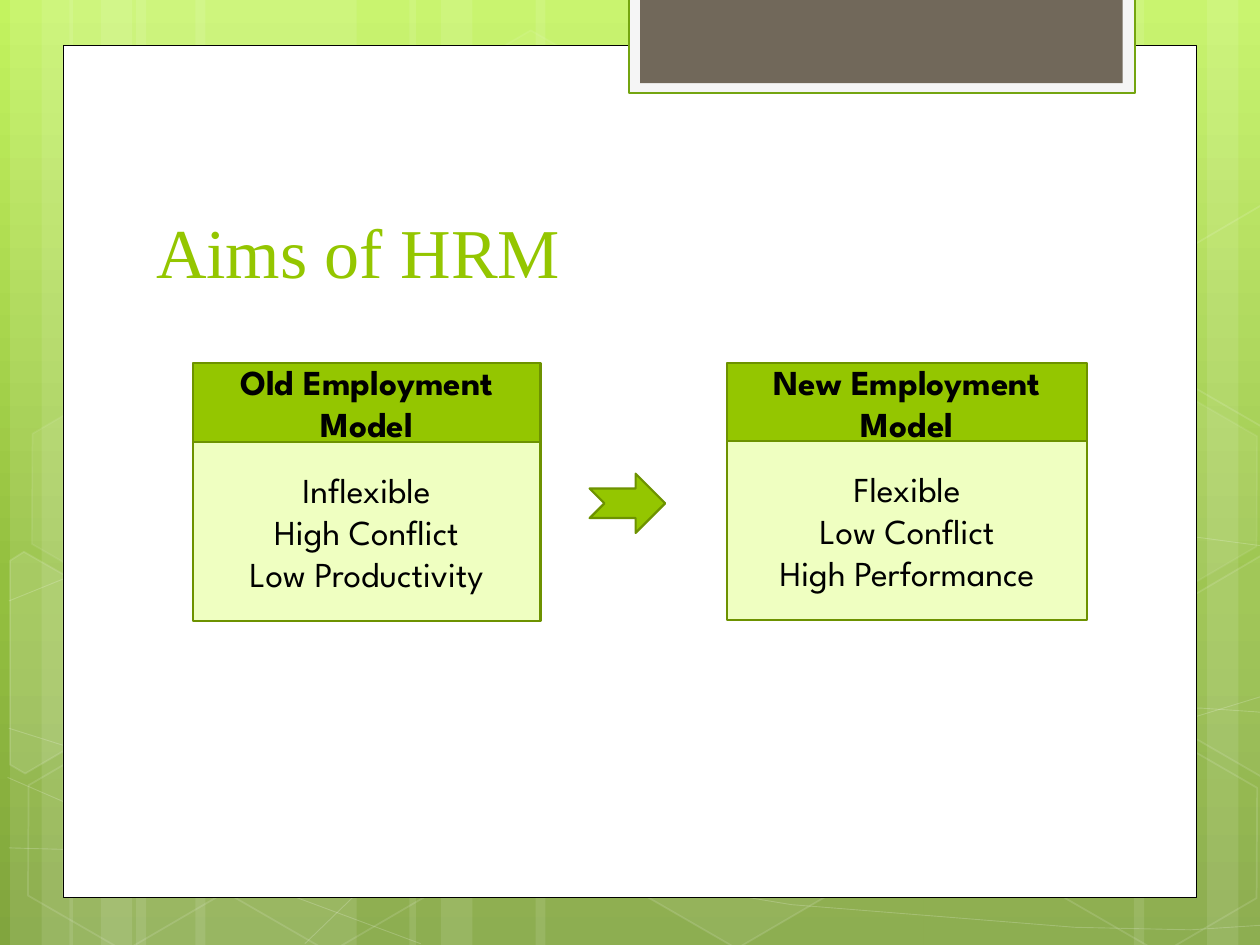
"""Build the "Aims of HRM" slide comparing the old and new employment models."""
import copy

from lxml import etree
from pptx import Presentation
from pptx import util as u
from pptx.dml.color import RGBColor
from pptx.enum import shapes, text
from pptx.oxml.ns import qn


class Theme:
    white, black, green, dark_green = "FFFFFF", "000000", "94C600", "6D9200"
    pale, tab, tab_edge, tab_core = "EFFFC1", "F5F5F5", "74A510", "71685A"
    sky = [(0, "C3F35F"), (0.62, "93BF3F"), (1, "81A53E")]
    title_font, body_font = "Times New Roman", "League Spartan"
    title_size, body_size = u.Pt(40), u.Pt(20)


def paint(sp, fill=None, line=None, width=1.25, fill_alpha=100, line_alpha=100):
    sp.shadow.inherit = False
    if line:
        sp.line.width = u.Pt(width)
    for part, color, alpha in ((sp.fill, fill, fill_alpha), (sp.line.fill, line, line_alpha)):
        if color is None:
            part.background()
            continue
        part.solid()
        part.fore_color.rgb = RGBColor.from_string(color)
        if alpha < 100:
            holder = sp.element.spPr if part is sp.fill else sp.line._ln
            clr = holder.find(qn("a:solidFill")).find(qn("a:srgbClr"))
            etree.SubElement(clr, qn("a:alpha")).set("val", str(alpha * 1000))


def outline(parent, points, close):
    emu = [(u.Inches(x), u.Inches(y)) for x, y in points]
    builder = parent.build_freeform(*emu[0])
    builder.add_line_segments(emu[1:], close=close)
    return builder.convert_to_shape()


prs = Presentation()
prs.slide_width, prs.slide_height = u.Inches(10), u.Inches(7.5)
s = prs.slides.add_slide(prs.slide_layouts[6])
rect = shapes.MSO_SHAPE.RECTANGLE

bg = s.background.fill
bg.gradient()
bg.gradient_angle = 270
stop_list = next(s.element.iter(qn("a:gsLst")))
stop_list.append(copy.deepcopy(stop_list[-1]))
for stop, (position, color) in zip(bg.gradient_stops, Theme.sky):
    stop.position = position
    stop.color.rgb = RGBColor.from_string(color)

decor = s.shapes.add_group_shape().shapes
bands = [(1.08, 1.75), (0.08, 0.5), (0.33, 0.83), (1.55, 1.75), (0.55, 0.5), (0.8, 0.83),
         (7.33, 1.75), (9.58, 0.5), (9, 0.83), (4.25, 3.08), (3.25, 0.5), (3.5, 0.83)]
for left, width in bands:
    sp = decor.add_shape(rect, u.Inches(left), 0, u.Inches(width), prs.slide_height)
    paint(sp, Theme.white, fill_alpha=10)

waves = [
    [(0.07, 6.73), (1.9, 6.78), (4.58, 6.65), (7.92, 6.17), (10.07, 5.51)],
    [(0.07, 4.77), (1.21, 4.31), (3.47, 3.87), (6.54, 3.87), (10.07, 4.34)],
    [(0.06, 6.17), (1.7, 6.88), (3.34, 7.49)],
    [(0.07, 5.78), (1.28, 6.16), (3.57, 6.73), (6.28, 7.18), (8.53, 7.36), (9.45, 7.38), (10.07, 7.34)],
    [(2.42, 7.49), (3.02, 6.91), (3.88, 6.39), (4.7, 6.09), (6.08, 5.78), (6.8, 5.69),
     (7.94, 5.62), (8.86, 5.62), (9.53, 5.62), (9.97, 5.65), (10.06, 5.66)],
]
for wave in waves:
    paint(outline(decor, wave, False), line=Theme.white, width=0.5, line_alpha=20)

hexagons = [(3.34, 0.36, 4, 8), (4.97, 5.89, 6, 12), (0.11, 5.91, 0, 12), (0.14, 3.12, 7, 8),
            (1.74, 5.92, 0, 12), (7.53, 4.53, 10, 12), (8.34, 5.93, 0, 12), (8.34, 3.14, 7, 8)]
for left, top, fill_alpha, line_alpha in hexagons:
    sp = decor.add_shape(shapes.MSO_SHAPE.HEXAGON, u.Inches(left), u.Inches(top), u.Inches(1.75), u.Inches(1.52))
    sp.adjustments[0], sp.adjustments[1] = 0.285, 1.155
    sp.rotation = 30
    paint(sp, Theme.white if fill_alpha else None, Theme.white, 1, fill_alpha, line_alpha)

cut_hexagons = [
    (10, [(0.08, 4.45), (0.19, 4.38), (0.96, 4.82), (0.95, 5.7), (0.2, 6.14), (0.08, 6.07)]),
    (4, [(9.26, 4.85), (10.01, 4.41), (10.09, 4.46), (10.09, 6.13), (10.02, 6.17), (9.26, 5.73)]),
    (0, [(9.26, 2.07), (10.01, 1.63), (10.1, 1.68), (10.09, 3.35), (10.02, 3.39), (9.26, 2.95)]),
]
for fill_alpha, points in cut_hexagons:
    paint(outline(decor, points, True), Theme.white if fill_alpha else None, Theme.white, 1, fill_alpha, 12)

panels = [(0.5, 0.36, 9, 6.76, Theme.white, Theme.black, 0.5),
          (4.99, -0.02, 4.02, 0.76, Theme.tab, Theme.tab_edge, 1.25),
          (5.08, -0.02, 3.83, 0.68, Theme.tab_core, None, 0)]
for *box, fill, line, width in panels:
    paint(s.shapes.add_shape(rect, *map(u.Inches, box)), fill, line, width)

title = s.shapes.add_textbox(u.Inches(1.14), u.Inches(1.12), u.Inches(7.68), u.Inches(1.25))
tf = title.text_frame
tf.word_wrap = True
tf.vertical_anchor = text.MSO_ANCHOR.BOTTOM
p = tf.paragraphs[0]
p.text = "Aims of HRM"
p.font.name, p.font.size = Theme.title_font, Theme.title_size
p.font.color.rgb = RGBColor.from_string(Theme.green)

models = [
    (1.53, 2.76, 3.51, "Old Employment Model", ["Inflexible", "High Conflict", "Low Productivity"]),
    (5.77, 2.86, 3.5, "New Employment Model", ["Flexible", "Low Conflict", "High Performance"]),
]
for left, width, body_top, heading, traits in models:
    card = s.shapes.add_group_shape().shapes
    rows = [(2.88, 0.63, Theme.green, True, [heading]), (body_top, 1.42, Theme.pale, False, traits)]
    for top, height, fill, bold, lines in rows:
        sp = card.add_shape(rect, *map(u.Inches, (left, top, width, height)))
        paint(sp, fill, Theme.dark_green)
        tf = sp.text_frame
        tf.word_wrap = True
        tf.vertical_anchor = text.MSO_ANCHOR.MIDDLE
        tf.text = "\n".join(lines)
        for p in tf.paragraphs:
            p.alignment = text.PP_ALIGN.CENTER
            p.font.name, p.font.size, p.font.bold = Theme.body_font, Theme.body_size, bold
            p.font.color.rgb = RGBColor.from_string(Theme.black)

arrow = s.shapes.add_shape(shapes.MSO_SHAPE.NOTCHED_RIGHT_ARROW, *map(u.Inches, (4.68, 3.76, 0.6, 0.47)))
paint(arrow, Theme.green, Theme.dark_green)

prs.save("out.pptx")
